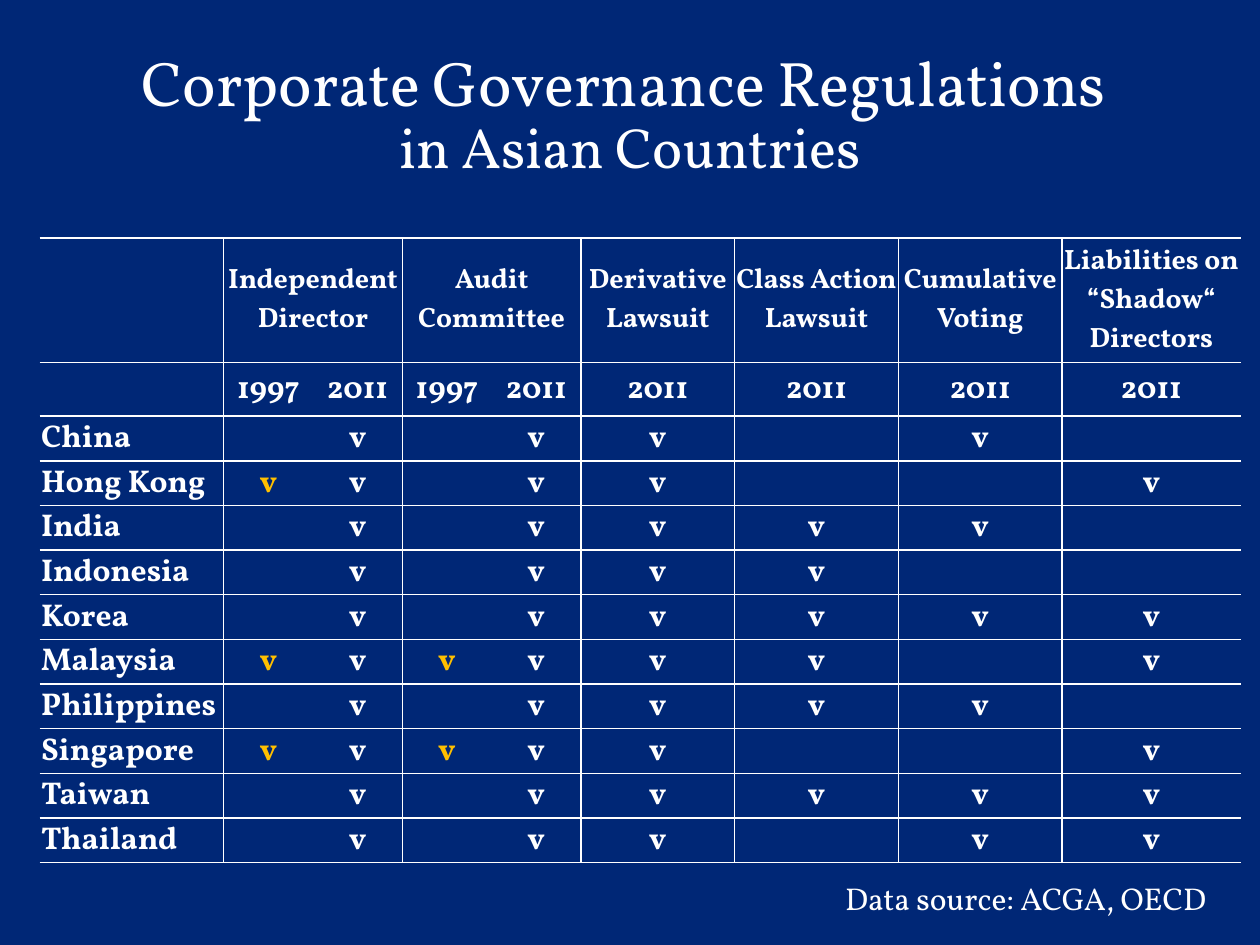
"""Build a slide with a table of corporate governance rules in Asian countries."""
from lxml.etree import SubElement
from pptx import Presentation
from pptx.dml.color import RGBColor
from pptx.enum.text import MSO_ANCHOR, MSO_AUTO_SIZE, PP_ALIGN
from pptx.oxml.ns import qn
from pptx.util import Cm, Pt

NAVY = RGBColor(0x00, 0x27, 0x76)
WHITE = RGBColor(0xFF, 0xFF, 0xFF)
GOLD = RGBColor(0xFF, 0xC0, 0x00)

HEADS = {
    1: "Independent\nDirector",
    3: "Audit\nCommittee",
    5: "Derivative Lawsuit",
    6: "Class Action Lawsuit",
    7: "Cumulative Voting",
    8: "Liabilities on “Shadow“\nDirectors",
}
YEARS = ["", "1997", "2011", "1997", "2011", "2011", "2011", "2011", "2011"]
MARKS = {
    "China": "-v-vv-v-",
    "Hong Kong": "vv-vv--v",
    "India": "-v-vvvv-",
    "Indonesia": "-v-vvv--",
    "Korea": "-v-vvvvv",
    "Malaysia": "vvvvvv-v",
    "Philippines": "-v-vvvv-",
    "Singapore": "vvvvv--v",
    "Taiwan": "-v-vvvvv",
    "Thailand": "-v-vv-vv",
}
WIDTHS = [3.71, 1.8, 1.8, 1.8, 1.8, 3.1, 3.3, 3.3, 3.6]
HEIGHTS = [2.51, 1.08] + [0.9] * len(MARKS)


def write(para, text, size=18, color=WHITE, bold=False, align=PP_ALIGN.LEFT):
    para.alignment = align
    run = para.add_run()
    run.text = text
    font = run.font
    font.name, font.size, font.bold = "Vollkorn", Pt(size), bold
    font.color.rgb = color


def edge(cell, side, shown):
    line = SubElement(cell._tc.get_or_add_tcPr(), qn("a:ln" + side), w=str(Pt(1)))
    if shown:
        fill = SubElement(line, qn("a:solidFill"))
        SubElement(fill, qn("a:srgbClr"), val=str(WHITE))
    else:
        SubElement(line, qn("a:noFill"))


deck = Presentation()
deck.slide_width, deck.slide_height = Cm(25.4), Cm(19.05)
slide = deck.slides.add_slide(deck.slide_layouts[6])
slide.background.fill.solid()
slide.background.fill.fore_color.rgb = NAVY

title = slide.shapes.add_textbox(Cm(1.27), Cm(0.76), Cm(22.86), Cm(3.18)).text_frame
title.word_wrap = True
title.vertical_anchor = MSO_ANCHOR.MIDDLE
para = title.paragraphs[0]
para.line_spacing = 0.9
write(para, "Corporate Governance Regulations ", size=36, align=PP_ALIGN.CENTER)
para.add_line_break()
write(para, "in Asian Countries", size=32.4, align=PP_ALIGN.CENTER)

rows = [[HEADS.get(col, "") for col in range(len(WIDTHS))], YEARS]
rows += [[land, *marks.replace("-", " ")] for land, marks in MARKS.items()]
table = slide.shapes.add_table(
    len(rows), len(WIDTHS), Cm(0.8), Cm(4.8), Cm(sum(WIDTHS)), Cm(sum(HEIGHTS))
).table
table.first_row = table.horz_banding = False
for col, width in zip(table.columns, WIDTHS):
    col.width = Cm(width)
for row, height in zip(table.rows, HEIGHTS):
    row.height = Cm(height)
for col in (1, 3):
    table.cell(0, col).merge(table.cell(0, col + 1))

last = len(WIDTHS) - 1
for i, texts in enumerate(rows):
    for j, text in enumerate(texts):
        cell = table.cell(i, j)
        cell.vertical_anchor = MSO_ANCHOR.MIDDLE
        cell.margin_left = cell.margin_right = cell.margin_top = Cm(0.03)
        cell.margin_bottom = 0
        edge(cell, "L", j > 0 and (i == 0 or j not in (2, 4)))
        edge(cell, "R", j < last and (i == 0 or j not in (1, 3)))
        edge(cell, "T", True)
        edge(cell, "B", True)
        cell.fill.background()
        if not text.strip():
            continue
        frame = cell.text_frame
        for k, part in enumerate(text.split("\n")):
            write(
                frame.add_paragraph() if k else frame.paragraphs[0],
                part,
                size=18 if i else 16,
                color=GOLD if i > 1 and j in (1, 3) else WHITE,
                bold=True,
                align=PP_ALIGN.CENTER if j else PP_ALIGN.LEFT,
            )

note = slide.shapes.add_textbox(Cm(16.79), Cm(17.6), Cm(8.46), Cm(1.02)).text_frame
note.word_wrap = False
note.auto_size = MSO_AUTO_SIZE.SHAPE_TO_FIT_TEXT
write(note.paragraphs[0], "Data source: ACGA, OECD")

deck.save("out.pptx")
